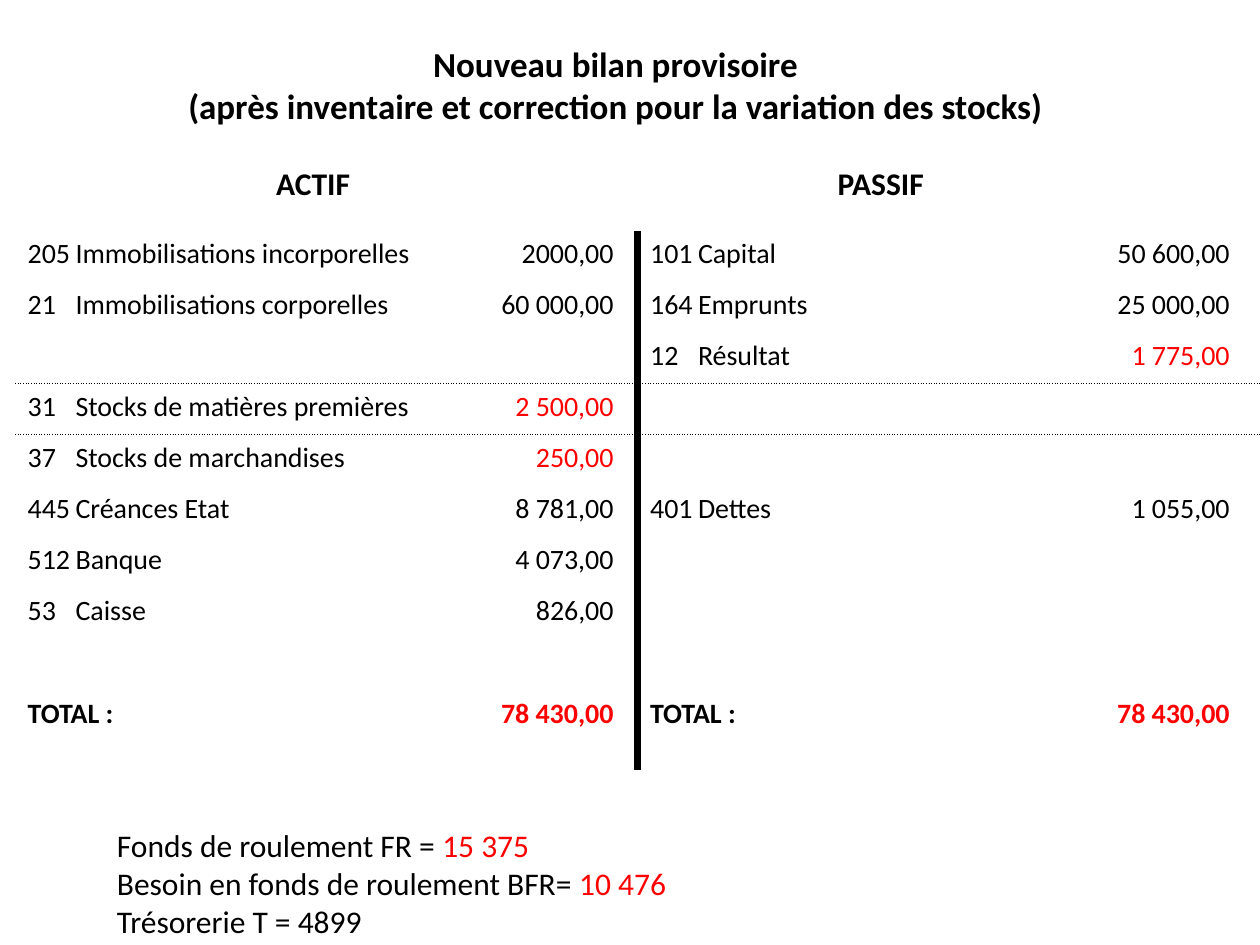
from dataclasses import dataclass
from itertools import zip_longest

from lxml import etree
from pptx import Presentation
from pptx import util as u
from pptx.dml import color
from pptx.enum import text
from pptx.oxml import ns

W, H = u.Inches(10), u.Inches(7.5)
COLORS = {"ink": "000000", "accent": "FF0000"}
FONT = "Calibri"
NO_GRID = "{2D5ABB26-0587-4C30-8999-92F81FD0307C}"
LABEL_TAB = 3.8
AMOUNT_TABS = (46.5, 46)
DOTTED_ROWS = (2, 3)
TABLE_ROWS = 10
ROW_H, TOTAL_H = 5.4, 8.47


@dataclass(frozen=True)
class Box:
    left: float
    top: float
    width: float
    height: float

    def emu(self) -> tuple:
        return across(self.left), down(self.top), across(self.width), down(self.height)


@dataclass(frozen=True)
class Entry:
    label: str
    amount: str
    account: str = ""
    color: str = "ink"


@dataclass(frozen=True)
class Note:
    box: Box
    lines: tuple
    size: int = 18
    bold: bool = False
    centered: bool = False


ASSETS = (
    Entry("Immobilisations incorporelles", "2000,00", "205"),
    Entry("Immobilisations corporelles", "60 000,00", "21"),
    None,
    Entry("Stocks de matières premières", "2 500,00", "31", "accent"),
    Entry("Stocks de marchandises", "250,00", "37", "accent"),
    Entry("Créances Etat", "8 781,00", "445"),
    Entry("Banque", "4 073,00", "512"),
    Entry("Caisse", "826,00", "53"),
    None,
    Entry("TOTAL :", "78 430,00", color="accent"),
)
LIABILITIES = (
    Entry("Capital", "50 600,00", "101"),
    Entry("Emprunts", "25 000,00", "164"),
    Entry("Résultat", "1 775,00", "12", "accent"),
    None,
    None,
    Entry("Dettes", "1 055,00", "401"),
    None,
    None,
    None,
    Entry("TOTAL :", "78 430,00", color="accent"),
)
NOTES = (
    Note(Box(7.5, 3.87, 82.7, 14.8),
         (("Nouveau bilan provisoire",),
          ("(après inventaire et correction pour la variation des stocks)",)),
         size=20, bold=True, centered=True),
    Note(Box(14.6, 16.67, 20.5, 5.33), (("ACTIF",),), bold=True, centered=True),
    Note(Box(57.7, 16.67, 24.4, 5.33), (("PASSIF",),), bold=True, centered=True),
    Note(Box(8.3, 86.8, 48, 13.47),
         (("Fonds de roulement FR = ", "15 375"),
          ("Besoin en fonds de roulement BFR= ", "10 476"),
          ("Trésorerie T = 4899",))),
)


def across(percent: float) -> int:
    return round(W * percent / 100)


def down(percent: float) -> int:
    return round(H * percent / 100)


def write(p, content: str, *, size: int = 16, shade: str = "ink", bold: bool = False) -> None:
    r = p.add_run()
    r.text = content
    r.font.name = FONT
    r.font.size = u.Pt(size)
    r.font.bold = bold
    r.font.color.rgb = color.RGBColor.from_string(COLORS[shade])


def draw_note(s, note: Note) -> None:
    tf = s.shapes.add_textbox(*note.box.emu()).text_frame
    tf.word_wrap = True
    for i, line in enumerate(note.lines):
        p = tf.add_paragraph() if i else tf.paragraphs[0]
        p.alignment = text.PP_ALIGN.CENTER if note.centered else text.PP_ALIGN.LEFT
        for part, shade in zip(line, COLORS):
            write(p, part, size=note.size, shade=shade, bold=note.bold)


def set_tabs(p, amount_tab: float) -> None:
    tabs = etree.SubElement(p._p.get_or_add_pPr(), ns.qn("a:tabLst"))
    for pos, align in ((LABEL_TAB, "l"), (amount_tab, "r")):
        etree.SubElement(tabs, ns.qn("a:tab"), pos=str(across(pos)), algn=align)


def set_border(cell, side: str, width: float = 0, dash: str = "solid") -> None:
    ln = etree.SubElement(cell._tc.get_or_add_tcPr(), ns.qn(f"a:ln{side}"), w=str(u.Pt(width)))
    if not width:
        etree.SubElement(ln, ns.qn("a:noFill"))
        return
    fill = etree.SubElement(ln, ns.qn("a:solidFill"))
    etree.SubElement(fill, ns.qn("a:srgbClr"), val=COLORS["ink"])
    etree.SubElement(ln, ns.qn("a:prstDash"), val=dash)


def draw_cell(cell, entry: Entry | None, row: int, col: int) -> None:
    borders = {"R" if col == 0 else "L": (4.5,)}
    if row - 1 in DOTTED_ROWS:
        borders["T"] = (1, "sysDot")
    if row in DOTTED_ROWS:
        borders["B"] = (1, "sysDot")
    for side in "LRTB":
        set_border(cell, side, *borders.get(side, ()))
    cell.fill.background()
    if entry is None:
        return
    p = cell.text_frame.paragraphs[0]
    set_tabs(p, AMOUNT_TABS[col])
    is_total = not entry.account
    label = entry.label if is_total else f"{entry.account}\t{entry.label}"
    write(p, f"{label}\t", bold=is_total)
    write(p, entry.amount, shade=entry.color, bold=is_total)


def draw_balance(s, box: Box) -> None:
    table = s.shapes.add_table(TABLE_ROWS, 2, *box.emu()).table
    table.first_row = table.horz_banding = False
    table._tbl.tblPr.find(ns.qn("a:tableStyleId")).text = NO_GRID
    for column in table.columns:
        column.width = across(box.width / 2)
    for row, entries in enumerate(zip_longest(ASSETS, LIABILITIES)):
        table.rows[row].height = down(TOTAL_H if row == TABLE_ROWS - 1 else ROW_H)
        for col, entry in enumerate(entries):
            draw_cell(table.cell(row, col), entry, row, col)


def main() -> None:
    prs = Presentation()
    prs.slide_width, prs.slide_height = W, H
    s = prs.slides.add_slide(prs.slide_layouts[6])
    draw_balance(s, Box(1.2, 24.4, 98.8, 57.07))
    for note in NOTES:
        draw_note(s, note)
    prs.save("out.pptx")


if __name__ == "__main__":
    main()
